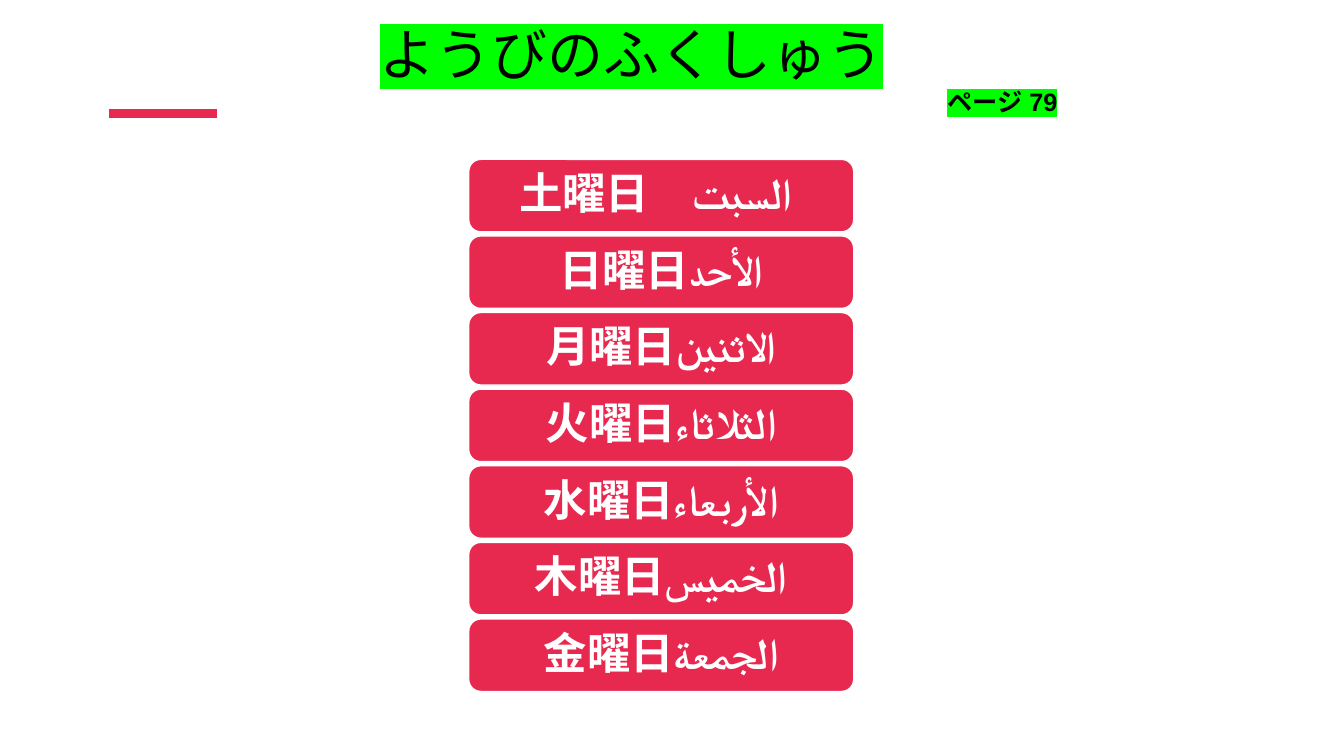
from lxml import etree
from pptx import Presentation
from pptx.dml.color import RGBColor
from pptx.enum.shapes import MSO_CONNECTOR, MSO_SHAPE
from pptx.enum.text import MSO_ANCHOR, MSO_AUTO_SIZE, PP_ALIGN
from pptx.oxml.ns import qn
from pptx.util import Pt

LINE = MSO_CONNECTOR.STRAIGHT
ROUNDED = MSO_SHAPE.ROUNDED_RECTANGLE
TOP, MIDDLE = MSO_ANCHOR.TOP, MSO_ANCHOR.MIDDLE
LEFT, CENTER = PP_ALIGN.LEFT, PP_ALIGN.CENTER
NO_AUTOFIT = MSO_AUTO_SIZE.NONE
GROW = MSO_AUTO_SIZE.SHAPE_TO_FIT_TEXT

RED, WHITE, BLACK, GREEN = "E72950", "FFFFFF", "000000", "00FF00"
TITLE_ONLY = 5
DAYS = [
    ("土曜日", " ", "السبت "),
    ("日曜日الأحد",),
    ("月曜日الاثنين",),
    ("火曜日الثلاثاء",),
    ("水曜日الأربعاء",),
    ("木曜日الخميس",),
    ("金曜日الجمعة",),
]
DAY_LEFT, DAY_TOP, DAY_WIDTH, DAY_HEIGHT, DAY_STEP = 334.8, 113.8, 275, 51.8, 54.72
WIDE_SPACE = "2300"  # hundredths of a point


def color(hex_code):
    return RGBColor.from_string(hex_code)


def add_run(paragraph, text, typeface, size, hex_code, bold=False, highlight=None):
    """Add a run that uses one typeface for Latin, Asian and Arabic text."""
    run = paragraph.add_run()
    run.text = text
    run.font.size = Pt(size)
    run.font.bold = bold
    run.font.color.rgb = color(hex_code)
    properties = run.font._element
    if highlight:
        marker = etree.SubElement(properties, qn("a:highlight"))
        etree.SubElement(marker, qn("a:srgbClr"), val=highlight)
    for script in ("a:latin", "a:ea", "a:cs"):
        etree.SubElement(properties, qn(script), typeface=typeface)
    return run


presentation = Presentation()
presentation.slide_width = Pt(960)
presentation.slide_height = Pt(540)
slide = presentation.slides.add_slide(presentation.slide_layouts[TITLE_ONLY])

# Accent line
accent = slide.shapes.add_connector(LINE, Pt(77.8), Pt(81.2), Pt(155), Pt(81.2))
accent.line.color.rgb = color(RED)
accent.line.width = Pt(6)
etree.SubElement(accent._element.spPr, qn("a:effectLst"))

# Title
title = slide.shapes.title
title.left, title.top, title.width, title.height = Pt(264.2), Pt(15.8), Pt(707), Pt(84.2)
title.text_frame.auto_size = NO_AUTOFIT
title.text_frame.vertical_anchor = TOP
paragraph = title.text_frame.paragraphs[0]
paragraph.alignment = LEFT
paragraph.line_spacing = 0.9
add_run(paragraph, "ようびのふくしゅう", "Roboto", 40, BLACK, highlight=GREEN)

# Page reference
page = slide.shapes.add_textbox(Pt(669.6), Pt(58.3), Pt(201.6), Pt(28.8))
page.text_frame.word_wrap = True
page.text_frame.auto_size = GROW
add_run(page.text_frame.paragraphs[0], "ページ 79", "Arial", 18, BLACK, True, GREEN)

# Days of the week
for index, parts in enumerate(DAYS):
    day = slide.shapes.add_shape(ROUNDED, Pt(DAY_LEFT), Pt(DAY_TOP + index * DAY_STEP),
                                 Pt(DAY_WIDTH), Pt(DAY_HEIGHT))
    day.shadow.inherit = False
    day.fill.solid()
    day.fill.fore_color.rgb = color(RED)
    day.line.color.rgb = color(WHITE)
    day.line.width = Pt(1)
    frame = day.text_frame
    frame.word_wrap = True
    frame.vertical_anchor = MIDDLE
    frame.margin_left = frame.margin_right = Pt(9.4)
    frame.margin_top = frame.margin_bottom = Pt(4.3)
    paragraph = frame.paragraphs[0]
    paragraph.alignment = CENTER
    paragraph.line_spacing = 0.9
    for part in parts:
        run = add_run(paragraph, part, "Roboto", 31, WHITE, True)
        if part == " ":
            run.font._element.set("spc", WIDE_SPACE)

presentation.save("out.pptx")
